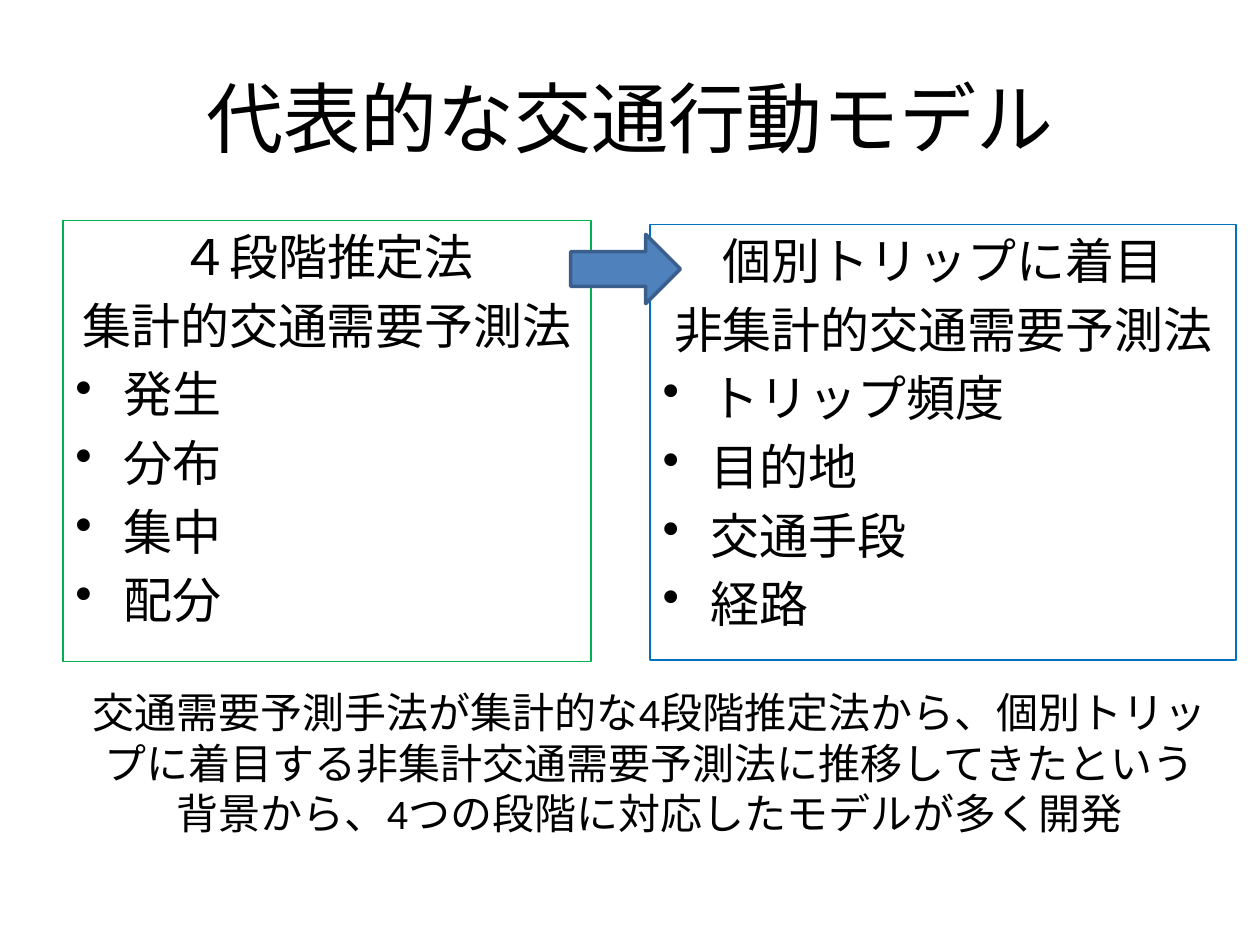
import pptx
import pptx.dml.color
import pptx.enum.lang
import pptx.enum.shapes
import pptx.enum.text
import pptx.oxml.ns
import pptx.util
from pptx.util import Inches

COLORS = {
    "text": "000000",
    "aggregate": "00B050",
    "disaggregate": "0070C0",
    "arrow": "4F81BD",
    "arrow_edge": "3A5F8C",
}
FONT = "Calibri"
CENTER = pptx.enum.text.PP_ALIGN.CENTER
LEFT = pptx.enum.text.PP_ALIGN.LEFT
INDENT = Inches(0.38)


def rgb(name):
    return pptx.dml.color.RGBColor.from_string(COLORS[name])


def format_paragraph(paragraph, size, align):
    paragraph.alignment = align
    for run in paragraph.runs:
        run.font.name = FONT
        run.font.size = pptx.util.Pt(size)
        run.font.color.rgb = rgb("text")
        run.font.language_id = pptx.enum.lang.MSO_LANGUAGE_ID.JAPANESE


def hang_paragraph(paragraph, bullet):
    """Give the paragraph a hanging indent, with or without a bullet."""
    properties = paragraph._p.get_or_add_pPr()
    properties.set("marL", str(INDENT))
    properties.set("indent", str(-INDENT))
    tag = "a:buChar" if bullet else "a:buNone"
    mark = pptx.oxml.xmlchemy.OxmlElement(tag)
    if bullet:
        mark.set("char", "•")
    properties.append(mark)


def add_title(slide, text):
    title = slide.shapes.title
    title.left, title.top = Inches(0.5), Inches(0.3)
    title.width, title.height = Inches(9), Inches(1.25)
    title.text_frame.text = text
    title.text_frame.vertical_anchor = pptx.enum.text.MSO_ANCHOR.MIDDLE
    format_paragraph(title.text_frame.paragraphs[0], 44, CENTER)


def add_method_box(slide, left, top, width, height, edge, headings, steps):
    box = slide.shapes.add_textbox(
        Inches(left), Inches(top), Inches(width), Inches(height))
    box.line.color.rgb = rgb(edge)
    box.line.width = pptx.util.Pt(0.75)
    frame = box.text_frame
    frame.word_wrap = True
    frame.text = "\n".join(headings + steps)
    for index, paragraph in enumerate(frame.paragraphs):
        is_step = index >= len(headings)
        format_paragraph(paragraph, 28, LEFT if is_step else CENTER)
        paragraph.space_before = pptx.util.Pt(5.6)
        hang_paragraph(paragraph, is_step)


def add_shift_arrow(slide):
    arrow = slide.shapes.add_shape(
        pptx.enum.shapes.MSO_SHAPE.RIGHT_ARROW,
        Inches(4.53), Inches(1.86), Inches(0.87), Inches(0.55))
    arrow.shadow.inherit = False
    arrow.fill.solid()
    arrow.fill.fore_color.rgb = rgb("arrow")
    arrow.line.color.rgb = rgb("arrow_edge")
    arrow.line.width = pptx.util.Pt(2)


def add_summary(slide, text):
    summary = slide.shapes.add_textbox(
        Inches(0.59), Inches(5.4), Inches(9.13), Inches(1.31))
    summary.text_frame.word_wrap = True
    summary.text_frame.text = text
    format_paragraph(summary.text_frame.paragraphs[0], 24, CENTER)


def main():
    deck = pptx.Presentation()
    deck.slide_width, deck.slide_height = Inches(10), Inches(7.5)
    slide = deck.slides.add_slide(deck.slide_layouts.get_by_name("Title Only"))

    add_title(slide, "代表的な交通行動モデル")

    # Aggregate method on the left, disaggregate method on the right
    add_method_box(slide, 0.5, 1.75, 4.19, 3.5, "aggregate",
                   ["４段階推定法", "集計的交通需要予測法"],
                   ["発生", "分布", "集中", "配分"])
    add_method_box(slide, 5.16, 1.78, 4.65, 3.46, "disaggregate",
                   ["個別トリップに着目", "非集計的交通需要予測法"],
                   ["トリップ頻度", "目的地", "交通手段", "経路"])
    add_shift_arrow(slide)

    # Background of the shift
    add_summary(slide, "交通需要予測手法が集計的な4段階推定法から、"
                       "個別トリップに着目する非集計交通需要予測法に"
                       "推移してきたという背景から、"
                       "4つの段階に対応したモデルが多く開発")

    deck.save("out.pptx")


if __name__ == "__main__":
    main()
